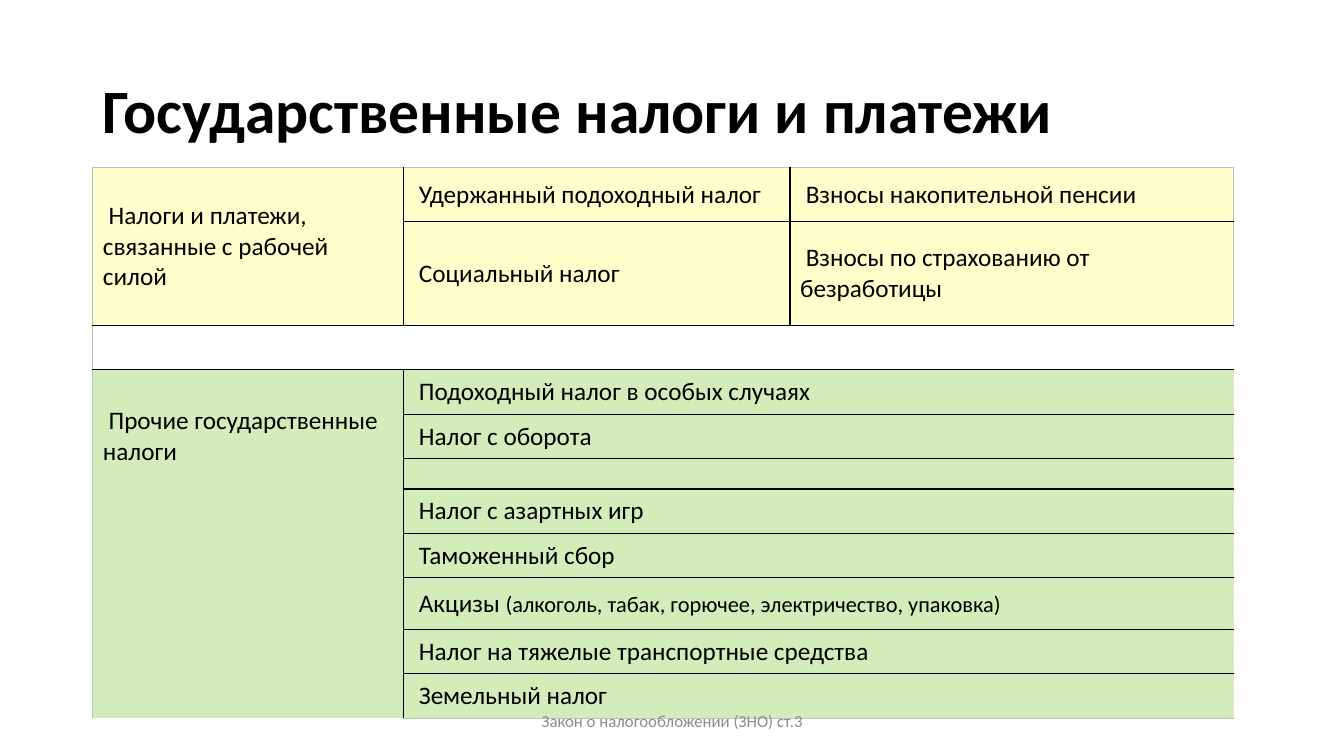
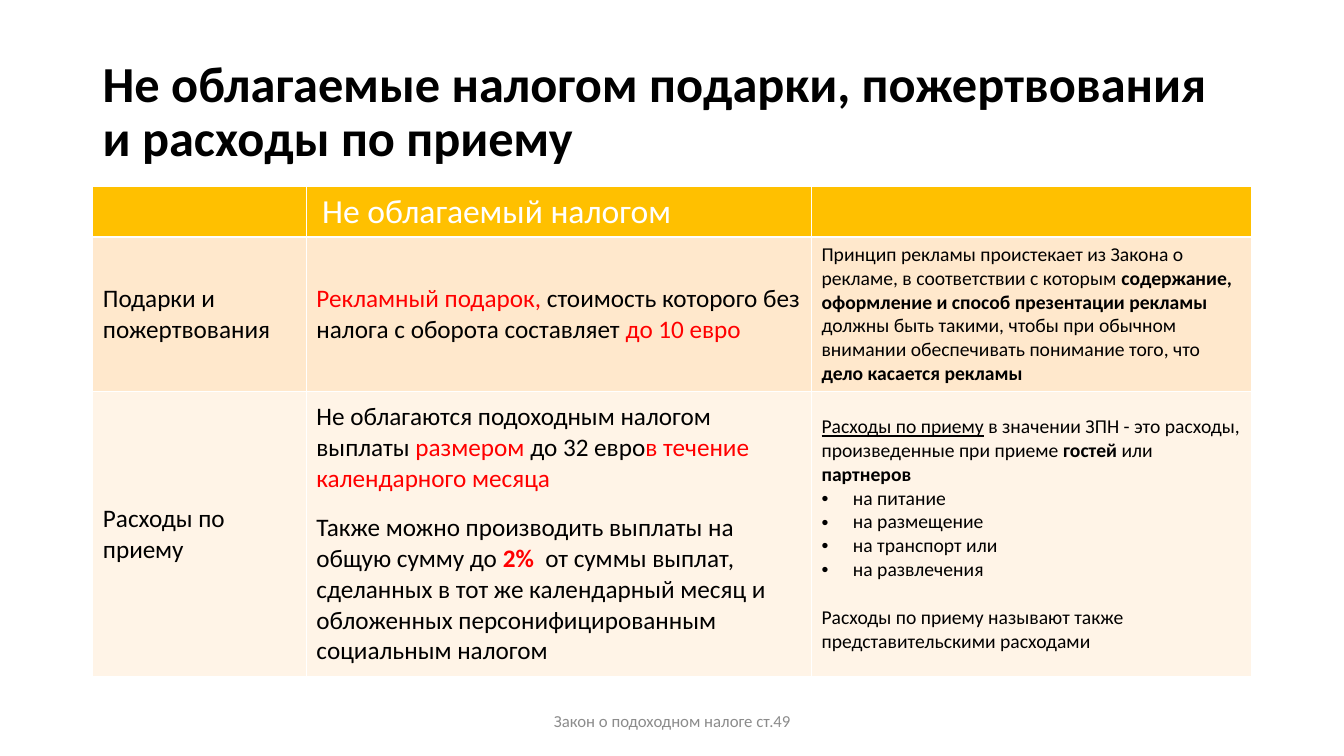
from dataclasses import dataclass
from lxml.etree import SubElement, Element
from pptx import Presentation
from pptx.dml.color import RGBColor as RGB
from pptx.enum.text import MSO_ANCHOR as Anchor, PP_ALIGN as Align
from pptx.oxml.ns import qn
from pptx.util import Cm, Pt


@dataclass(frozen=True)
class Theme:
    font: str = "Calibri"
    black: str = "000000"
    white: str = "FFFFFF"
    red: str = "FF0000"
    grey: str = "8C8C8C"
    edge: str = "BFBFBF"
    yellow: str = "FFFFCC"
    green: str = "D4ECBA"
    amber: str = "FFC000"
    peach: str = "FFE8CC"
    cream: str = "FFF4E7"
    header: int = 24
    body: int = 18
    remark: int = 16
    note: int = 14
    footer: int = 12
    spacer: int = 11


T = Theme()
RED = {"color": T.red}
BOLD = {"bold": True}


@dataclass
class Para:
    """A run is a string, or a (string, format) pair."""
    runs: list
    gap: float = 0
    bullet: bool = False


@dataclass
class Cell:
    row: int
    col: int
    paras: list
    fill: str
    rows: int = 1
    cols: int = 1
    size: int = T.body
    color: str = T.black
    anchor: Anchor = Anchor.MIDDLE
    top: float = 0.13


LABOUR_TAXES = [
    (" Удержанный подоходный налог", " Взносы накопительной пенсии"),
    (" Социальный налог", " Взносы по страхованию от безработицы"),
]
OTHER_TAXES = [
    [" Подоходный налог в особых случаях"],
    [" Налог с оборота"],
    [],
    [" Налог с азартных игр"],
    [" Таможенный сбор"],
    [" Акцизы ", ("(алкоголь, табак, горючее, электричество, упаковка)",
                 {"size": T.remark})],
    [" Налог на тяжелые транспортные средства"],
    [" Земельный налог"],
]
OTHER_START = len(LABOUR_TAXES) + 1

tax_cells = [
    Cell(0, 0, [Para([" Налоги и платежи, связанные с рабочей силой"])],
         T.yellow, rows=len(LABOUR_TAXES)),
    *[Cell(r, c, [Para([text])], T.yellow)
      for r, pair in enumerate(LABOUR_TAXES)
      for c, text in enumerate(pair, 1)],
    Cell(len(LABOUR_TAXES), 0, [], T.white, cols=3),
    Cell(OTHER_START, 0, [Para([" Прочие государственные налоги"])], T.green,
         rows=len(OTHER_TAXES), anchor=Anchor.TOP, top=0.9),
    *[Cell(r, 1, [Para(runs)] if runs else [], T.green, cols=2,
           size=T.body if runs else T.spacer)
      for r, runs in enumerate(OTHER_TAXES, OTHER_START)],
]

GIFT_RULE = [Para([
    ("Рекламный подарок, ", RED),
    "стоимость которого без налога с оборота составляет ",
    ("до 10 евро", RED)])]
GIFT_NOTE = [Para([
    "Принцип рекламы проистекает из Закона о рекламе, в соответствии с которым ",
    ("содержание, оформление и способ презентации рекламы", BOLD),
    " должны быть такими, чтобы при обычном внимании обеспечивать понимание "
    "того, что ",
    ("дело касается рекламы", BOLD)])]
RECEPTION_RULE = [
    Para(["Не облагаются подоходным налогом выплаты ", ("размером ", RED),
          "до 32 евро", ("в течение календарного месяца", RED)]),
    Para(["Также можно производить выплаты на общую сумму до ",
          ("2% ", {**RED, **BOLD}),
          " от суммы выплат, сделанных в тот же календарный месяц и "
          "обложенных персонифицированным социальным налогом"], gap=13.4),
]
RECEPTION_NOTE = [
    Para([("Расходы по приему", {"underline": True}),
          " в значении ЗПН - это расходы, произведенные при приеме ",
          ("гостей", BOLD), " или ", ("партнеров", BOLD)]),
    *[Para([text], bullet=True) for text in (
        "на питание", "на размещение", "на транспорт или", "на развлечения")],
    Para(["Расходы по приему называют также представительскими расходами"],
         gap=17.1),
]
GIFT_ROWS = [
    ("Подарки и пожертвования", GIFT_RULE, GIFT_NOTE, T.peach),
    ("Расходы по приему", RECEPTION_RULE, RECEPTION_NOTE, T.cream),
]

gift_cells = [
    Cell(0, 0, [], T.amber),
    Cell(0, 1, [Para([(" ", {"size": T.body}), "Не облагаемый налогом"])],
         T.amber, size=T.header, color=T.white, anchor=Anchor.TOP),
    Cell(0, 2, [], T.amber),
]
for row, (label, rule, note, fill) in enumerate(GIFT_ROWS, 1):
    gift_cells += [Cell(row, 0, [Para([label])], fill),
                   Cell(row, 1, rule, fill),
                   Cell(row, 2, note, fill, size=T.note)]

SLIDES = [
    {"title": "Государственные налоги и платежи", "title_size": 44,
     "footer": "Закон о налогообложении (ЗНО) ст.3",
     "top": 4.22, "cols": [7.82, 9.75, 11.18],
     "rows": [1.37, 2.61, *[1.12] * 3, 0.76, 1.12, 1.12, 1.3, 1.12, 1.12],
     "cells": tax_cells, "inner": T.black, "outer": T.edge},
    {"title": "Не облагаемые налогом подарки, пожертвования и расходы по приему",
     "title_size": 36, "footer": "Закон о подоходном налоге ст.49",
     "top": 4.7, "cols": [5.38, 12.73, 11.1], "rows": [1.27, 3.89, 7.19],
     "cells": gift_cells, "inner": T.white, "outer": T.white},
]
LEFT = 2.34
SIDES = {"L": (0, -1), "R": (0, 1), "T": (-1, 0), "B": (1, 0)}


def write_text(tf, paras, size=T.body, color=T.black, bold=False,
               align=Align.LEFT, spacing=None):
    tf.word_wrap = True
    for i, para in enumerate(paras):
        p = tf.add_paragraph() if i else tf.paragraphs[0]
        p.alignment = align
        if spacing:
            p.line_spacing = spacing
        if para.gap:
            p.space_before = Pt(para.gap)
        if para.bullet:
            pPr = p._p.get_or_add_pPr()
            pPr.set("marL", str(Cm(0.79)))
            pPr.set("indent", str(-Cm(0.79)))
            SubElement(pPr, qn("a:buFont"), typeface="Arial")
            SubElement(pPr, qn("a:buChar"), char="•")
        for run in para.runs:
            text, fmt = (run, {}) if isinstance(run, str) else run
            r = p.add_run()
            r.text = text
            f = r.font
            f.name = T.font
            f.size = Pt(fmt.get("size", size))
            f.bold = fmt.get("bold", bold)
            f.underline = fmt.get("underline", False)
            f.color.rgb = RGB.from_string(fmt.get("color", color))
    if not paras:
        SubElement(tf.paragraphs[0]._p, qn("a:endParaRPr"), sz=str(size * 100))


def add_text(s, box, text, **fmt):
    tf = s.shapes.add_textbox(*map(Cm, box)).text_frame
    tf.vertical_anchor = Anchor.MIDDLE
    write_text(tf, [Para([text])], **fmt)


def set_borders(cell, colors):
    """Draw one line per side; a side without a colour gets none."""
    tcPr = cell._tc.get_or_add_tcPr()
    for i, (side, color) in enumerate(colors.items()):
        ln = Element(qn(f"a:ln{side}"), w=str(Pt(1)))
        if color:
            SubElement(SubElement(ln, qn("a:solidFill")), qn("a:srgbClr"), val=color)
        else:
            SubElement(ln, qn("a:noFill"))
        tcPr.insert(i, ln)


def add_grid(s, top, cols, rows, cells, inner, outer):
    frame = s.shapes.add_table(len(rows), len(cols), Cm(LEFT), Cm(top),
                               Cm(sum(cols)), Cm(sum(rows)))
    table = frame.table
    table.first_row = table.horz_banding = False
    for column, width in zip(table.columns, cols):
        column.width = Cm(width)
    for line, height in zip(table.rows, rows):
        line.height = Cm(height)

    owner = {(r, c): item for item in cells
             for r in range(item.row, item.row + item.rows)
             for c in range(item.col, item.col + item.cols)}
    for item in cells:
        cell = table.cell(item.row, item.col)
        if item.rows * item.cols > 1:
            cell.merge(table.cell(item.row + item.rows - 1,
                                  item.col + item.cols - 1))
        cell.vertical_anchor = item.anchor
        cell.margin_top = Cm(item.top)
        write_text(cell.text_frame, item.paras, size=item.size, color=item.color)
    for (r, c), item in owner.items():
        cell = table.cell(r, c)
        cell.fill.solid()
        cell.fill.fore_color.rgb = RGB.from_string(item.fill)
        colors = {}
        for side, (dr, dc) in SIDES.items():
            neighbour = owner.get((r + dr, c + dc))
            colors[side] = (outer if neighbour is None
                            else None if neighbour is item else inner)
        set_borders(cell, colors)


def main():
    prs = Presentation()
    prs.slide_width, prs.slide_height = Cm(33.87), Cm(19.05)
    for page in SLIDES:
        s = prs.slides.add_slide(prs.slide_layouts[6])
        add_text(s, (LEFT, 1.02, 29.21, 3.68), page["title"],
                 size=page["title_size"], bold=True, spacing=0.9)
        add_grid(s, *(page[key] for key in
                      ("top", "cols", "rows", "cells", "inner", "outer")))
        add_text(s, (11.23, 17.65, 11.43, 1.02), page["footer"],
                 size=T.footer, color=T.grey, align=Align.CENTER)
    prs.save("out.pptx")


if __name__ == "__main__":
    main()
